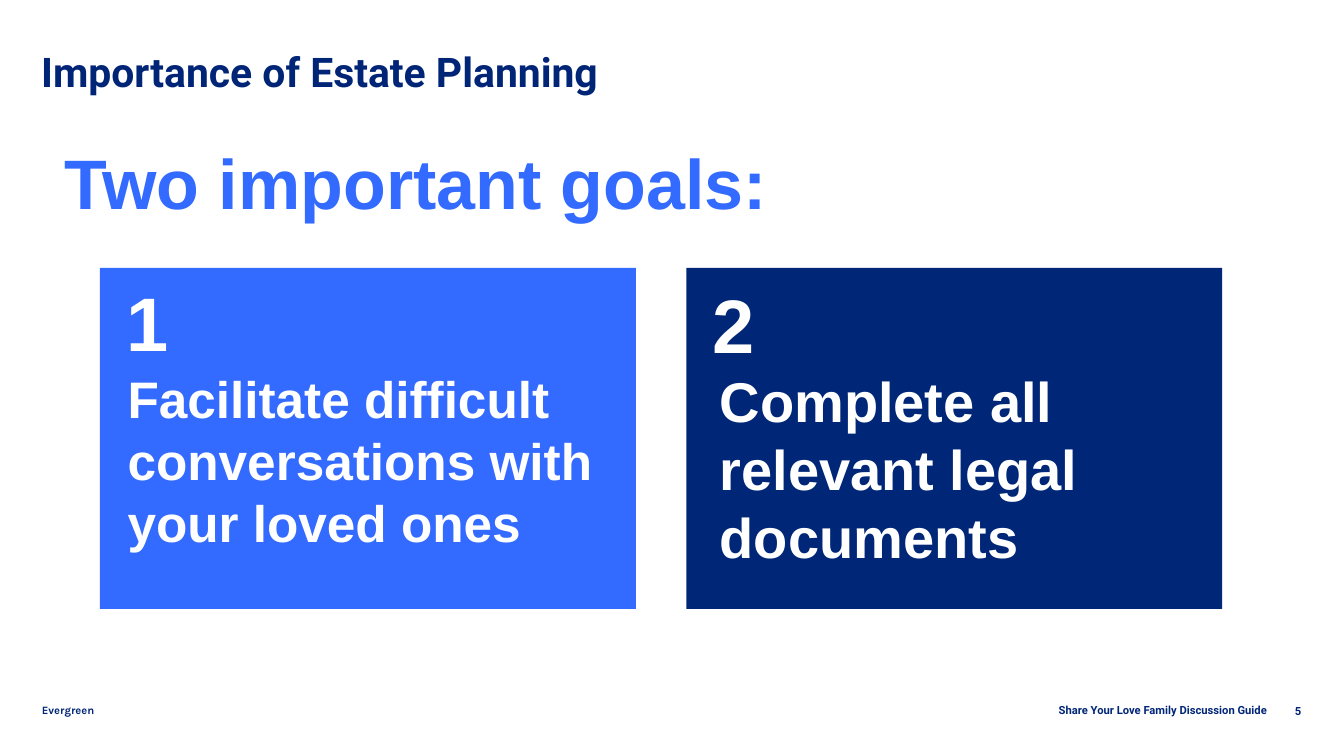
from pptx import Presentation
from pptx.dml.color import RGBColor
from pptx.enum.shapes import MSO_SHAPE
from pptx.enum.text import MSO_ANCHOR, MSO_AUTO_SIZE, PP_ALIGN
from pptx.util import Inches, Pt

NAVY = RGBColor(0x00, 0x26, 0x77)
TITLE_NAVY = RGBColor(0x00, 0x25, 0x77)
BLUE = RGBColor(0x33, 0x6A, 0xFF)
WHITE = RGBColor(0xFF, 0xFF, 0xFF)
RECTANGLE = MSO_SHAPE.RECTANGLE
LEFT, CENTER, RIGHT = PP_ALIGN.LEFT, PP_ALIGN.CENTER, PP_ALIGN.RIGHT
TOP, MIDDLE = MSO_ANCHOR.TOP, MSO_ANCHOR.MIDDLE
NO_AUTOFIT = MSO_AUTO_SIZE.NONE


def write_text(shape, text, *, size, font="Arial", color=WHITE, align=LEFT,
               anchor=TOP, spacing=None, top_inset=0.05, right_inset=0.1):
    frame = shape.text_frame
    frame.word_wrap = True
    frame.auto_size = NO_AUTOFIT
    frame.vertical_anchor = anchor
    frame.margin_left = Inches(0.1)
    frame.margin_right = Inches(right_inset)
    frame.margin_top = Inches(top_inset)
    frame.margin_bottom = Inches(0.05)
    paragraph = frame.paragraphs[0]
    paragraph.alignment = align
    paragraph.line_spacing = spacing
    paragraph.space_before = Pt(0)
    run = paragraph.add_run()
    run.text = text
    run.font.name = font
    run.font.size = Pt(size)
    run.font.bold = True
    run.font.color.rgb = color


class GoalSlide:
    heading_font = "Roboto"
    line_height = 1.21

    def __init__(self, presentation):
        self.slide = presentation.slides.add_slide(presentation.slide_layouts[5])

    def title(self, text, left, top, width, height):
        shape = self.slide.shapes.title
        shape.left, shape.top = Inches(left), Inches(top)
        shape.width, shape.height = Inches(width), Inches(height)
        write_text(shape, text, size=35, font=self.heading_font,
                   color=TITLE_NAVY, spacing=0.9)

    def text(self, text, left, top, width, height, **style):
        shape = self.slide.shapes.add_textbox(
            Inches(left), Inches(top), Inches(width), Inches(height))
        write_text(shape, text, **style)

    def large_text(self, text, left, top, width, height, size, **style):
        self.text(text, left, top, width, height, size=size, top_inset=0.08,
                  spacing=Pt(round(size * self.line_height, 1)), **style)

    def footer(self, text, left, width, height=0.24, **style):
        style = {"font": self.heading_font, "color": NAVY, "anchor": MIDDLE,
                 "align": RIGHT, **style}
        self.text(text, left, 8.33, width, height, size=9.6, **style)

    def panel(self, left, top, width, height, color):
        shape = self.slide.shapes.add_shape(
            RECTANGLE, Inches(left), Inches(top), Inches(width), Inches(height))
        shape.shadow.inherit = False
        shape.fill.solid()
        shape.fill.fore_color.rgb = color
        shape.line.fill.background()

    def goal(self, number, text, left, color, size, number_top, text_left, text_width):
        self.panel(left, 3.19, 6.38, 4.06, color)
        self.large_text(number, left, number_top, 1.13, 1.19, 65, align=CENTER)
        self.large_text(text, text_left, 4.28, text_width, 2.52, size, right_inset=0.5)


def main():
    presentation = Presentation()
    presentation.slide_width = Inches(16)
    presentation.slide_height = Inches(9)
    page = GoalSlide(presentation)
    page.title("Importance of Estate Planning", 0.39, 0.57, 9.36, 0.33)
    page.large_text("Two important goals:", 0.03, 1.57, 9.85, 1.11, 60,
                    color=BLUE, align=CENTER)
    page.goal("1", "Facilitate difficult conversations with your loved ones",
              1.19, BLUE, 44, 3.19, 1.42, 6.58)
    page.goal("2", "Complete all relevant legal documents",
              8.17, NAVY, 48, 3.22, 8.47, 6.89)
    page.footer("Evergreen", 0.4, 2.48, font="Karla", align=LEFT)
    page.footer("Share Your Love Family Discussion Guide", 9.78, 5.4)
    page.footer("5", 15.19, 0.4, 0.19, color=TITLE_NAVY, anchor=TOP)
    presentation.save("out.pptx")


if __name__ == "__main__":
    main()
